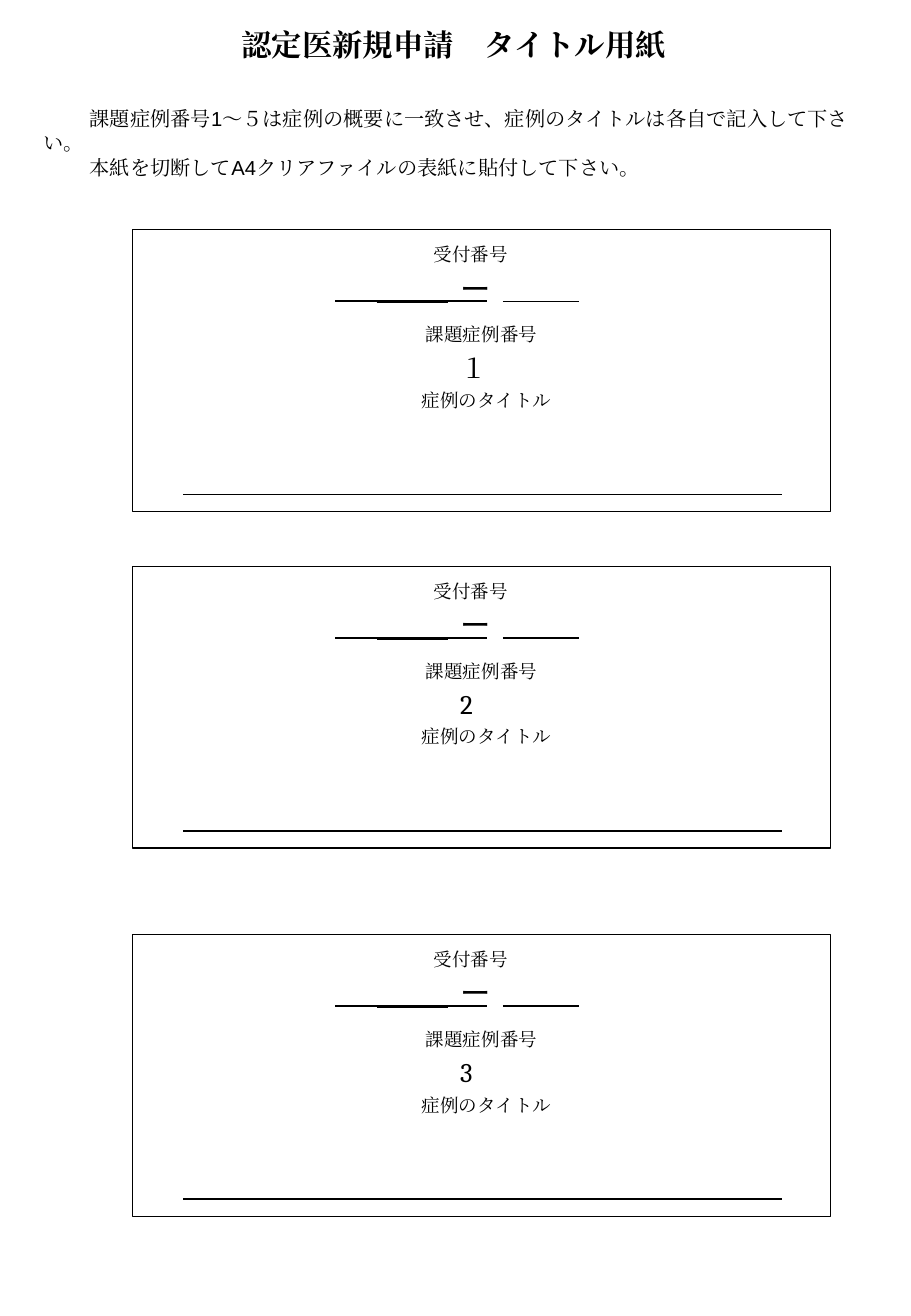
"""Build the title sheet with three cut-out case cards."""
from lxml.etree import SubElement
from pptx import Presentation
from pptx.dml.color import RGBColor
from pptx.enum.shapes import MSO_CONNECTOR, MSO_SHAPE
from pptx.enum.text import MSO_ANCHOR, PP_ALIGN
from pptx.oxml.ns import qn
from pptx.util import Inches, Pt

BLACK = RGBColor(0x00, 0x00, 0x00)
BODY_FONT = "Cambria"
LATIN_FONT = "Arial"
DASH_FONT = "Calibri"
CARD_LEFT, CARD_WIDTH, CARD_HEIGHT = 1.09, 5.75, 2.32
LABEL_WIDTH, LABEL_HEIGHT = 3.75, 0.29


class TitleSheet:
    def __init__(self, slide):
        self.slide = slide
        self.shapes = slide.shapes

    def start_card(self):
        self.shapes = self.slide.shapes.add_group_shape().shapes

    def text(self, left, top, width, height, paragraphs, size, font=BODY_FONT,
             bold=False, align=PP_ALIGN.LEFT, indent=0, anchor=MSO_ANCHOR.TOP):
        box = self.shapes.add_textbox(
            Inches(left), Inches(top), Inches(width), Inches(height))
        frame = box.text_frame
        frame.word_wrap = True
        frame.vertical_anchor = anchor
        for index, parts in enumerate(paragraphs):
            paragraph = frame.paragraphs[0] if index == 0 else frame.add_paragraph()
            paragraph.alignment = align
            properties = paragraph._p.get_or_add_pPr()
            properties.set("marL", "0")
            properties.set("indent", str(Inches(indent)))
            paragraph.font.name = font
            paragraph.font.size = Pt(size)
            paragraph.font.bold = bold
            paragraph.font.color.rgb = BLACK
            defaults = properties.find(qn("a:defRPr"))
            SubElement(defaults, qn("a:ea")).set("typeface", font)
            for part in parts:
                run = paragraph.add_run()
                run.text = part
                if len(parts) > 1 and part.isascii():
                    run.font.name = LATIN_FONT

    def label(self, left, top, caption):
        self.text(left, top, LABEL_WIDTH, LABEL_HEIGHT, [[caption]], 11,
                  align=PP_ALIGN.CENTER)

    def rule(self, start, end, y, weight=1):
        line = self.shapes.add_connector(
            MSO_CONNECTOR.STRAIGHT, Inches(start), Inches(y), Inches(end), Inches(y))
        line.line.color.rgb = BLACK
        line.line.width = Pt(weight)
        SubElement(line._element.spPr, qn("a:effectLst"))

    def frame(self, top):
        border = self.shapes.add_shape(
            MSO_SHAPE.RECTANGLE, Inches(CARD_LEFT), Inches(top),
            Inches(CARD_WIDTH), Inches(CARD_HEIGHT))
        border.shadow.inherit = False
        border.fill.background()
        border.line.color.rgb = BLACK
        border.line.width = Pt(0.75)

    def card(self, top, number):
        self.start_card()
        self.frame(top)
        self.label(2, top + 0.06, "受付番号")
        self.rule(2.76, 4.01, top + 0.59, 1.25)
        self.rule(4.14, 4.77, top + 0.59)
        self.rule(3.1, 3.69, top + 0.6)
        self.text(3.69, top + 0.28, 0.45, 0.4, [["ー"]], 18, DASH_FONT)
        self.label(2.09, top + 0.72, "課題症例番号")
        self.text(3.69, top + 0.95, LABEL_WIDTH, 0.37, [[number]], 16)
        self.label(2.13, top + 1.26, "症例のタイトル")
        self.rule(1.51, 6.44, top + 2.18)


def main():
    presentation = Presentation()
    presentation.slide_width = Inches(7.5)
    presentation.slide_height = Inches(10.83)
    sheet = TitleSheet(presentation.slides.add_slide(presentation.slide_layouts[6]))

    instructions = [
        ["課題症例番号", "1", "〜５は症例の概要に一致させ、症例のタイトルは各自で記入して下さい。"],
        ["本紙を切断して", "A4", "クリアファイルの表紙に貼付して下さい。"],
    ]
    sheet.text(0.26, 0.82, 6.97, 0.71, instructions, 12, indent=0.38,
               anchor=MSO_ANCHOR.MIDDLE)
    sheet.text(1.51, 0.17, 5.57, 0.4, [["認定医新規申請　タイトル用紙"]], 18,
               bold=True, indent=0.38)
    for top, number in ((1.89, "１"), (4.66, "2"), (7.69, "3")):
        sheet.card(top, number)

    presentation.save("out.pptx")


if __name__ == "__main__":
    main()
